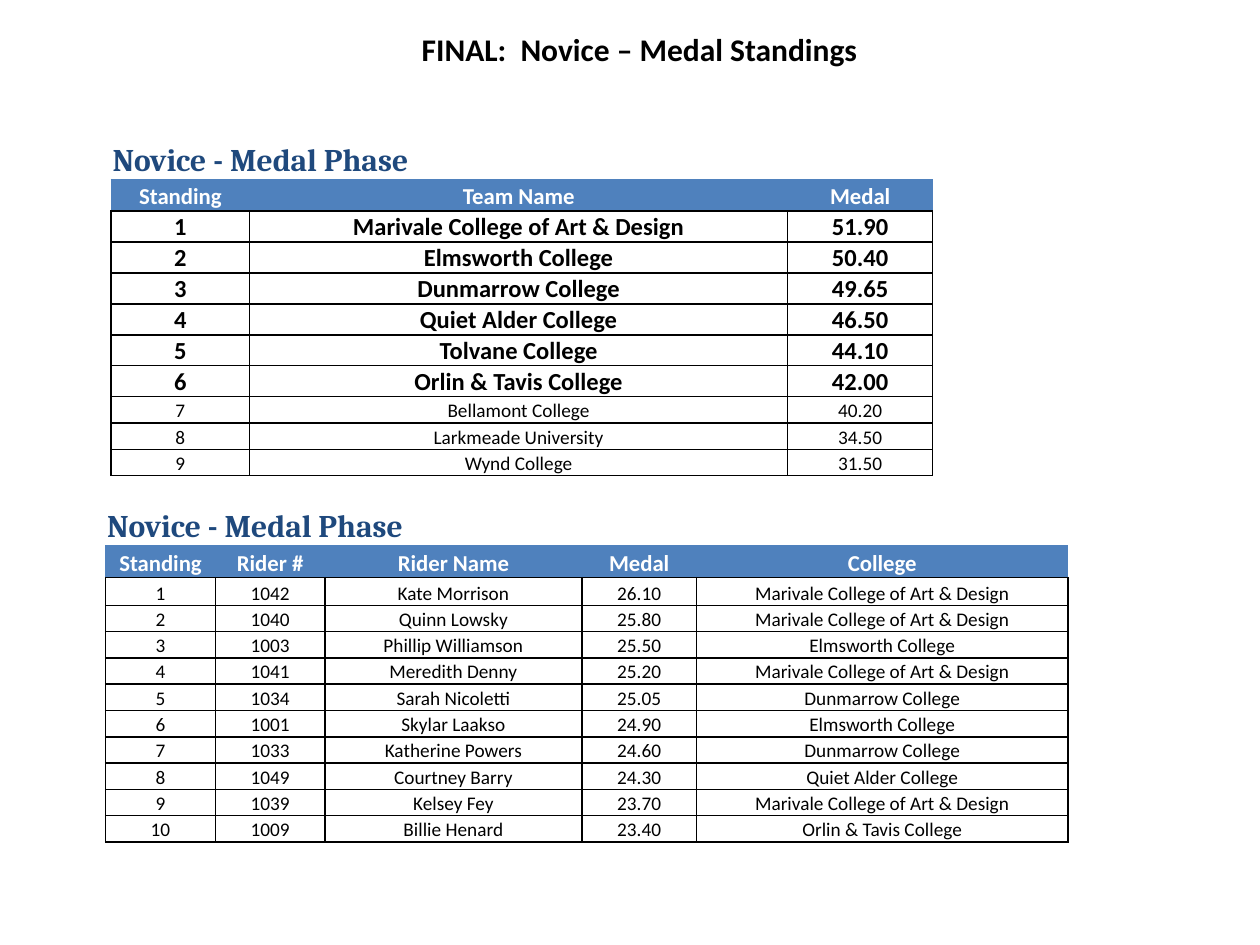
from lxml import etree
from pptx import Presentation
from pptx.dml.color import RGBColor
from pptx.enum.text import MSO_ANCHOR, MSO_AUTO_SIZE, PP_ALIGN
from pptx.oxml.ns import qn
from pptx.util import Cm, Pt

LEFT, CENTER = PP_ALIGN.LEFT, PP_ALIGN.CENTER
BOTTOM = MSO_ANCHOR.BOTTOM
FIT_SHAPE = MSO_AUTO_SIZE.SHAPE_TO_FIT_TEXT

THEME = {
    "body_font": "Calibri", "heading_font": "Cambria",
    "black": "000000", "white": "FFFFFF", "blue": "4F81BD", "navy": "1F497D",
    "title_size": 18, "header_size": 13, "leader_size": 14, "body_size": 11,
    "plain_style": "{2D5ABB26-0587-4C30-8999-92F81FD0307C}",
}

TITLE = "FINAL:  Novice – Medal Standings"
TABLES = [
    {
        "heading": "Novice - Medal Phase",
        "left": 2.24, "top": 2.82, "columns": [2.79, 10.85, 2.92], "leaders": 6,
        "header": ["Standing", "Team Name", "Medal"],
        "rows": [
            ("Marivale College of Art & Design", "51.90"),
            ("Elmsworth College", "50.40"),
            ("Dunmarrow College", "49.65"),
            ("Quiet Alder College", "46.50"),
            ("Tolvane College", "44.10"),
            ("Orlin & Tavis College", "42.00"),
            ("Bellamont College", "40.20"),
            ("Larkmeade University", "34.50"),
            ("Wynd College", "31.50"),
        ],
    },
    {
        "heading": "Novice - Medal Phase",
        "left": 2.13, "top": 10.21, "columns": [2.21, 2.21, 5.18, 2.31, 7.49], "leaders": 0,
        "header": ["Standing", "Rider #", "Rider Name", "Medal", "College"],
        "rows": [
            ("1042", "Kate Morrison", "26.10", "Marivale College of Art & Design"),
            ("1040", "Quinn Lowsky", "25.80", "Marivale College of Art & Design"),
            ("1003", "Phillip Williamson", "25.50", "Elmsworth College"),
            ("1041", "Meredith Denny", "25.20", "Marivale College of Art & Design"),
            ("1034", "Sarah Nicoletti", "25.05", "Dunmarrow College"),
            ("1001", "Skylar Laakso", "24.90", "Elmsworth College"),
            ("1033", "Katherine Powers", "24.60", "Dunmarrow College"),
            ("1049", "Courtney Barry", "24.30", "Quiet Alder College"),
            ("1039", "Kelsey Fey", "23.70", "Marivale College of Art & Design"),
            ("1009", "Billie Henard", "23.40", "Orlin & Tavis College"),
        ],
    },
]
TOP_ROW_HEIGHTS = [0.79, 0.64, 0.56]
ROW_HEIGHT = 0.53
HEADING_SPAN = 3
CELL_MARGIN = 0.03

BLUE_LINE = (THEME["blue"], 0.5)
BLACK_LINE = (THEME["black"], 1)
HEADING_BORDERS = {"B": BLUE_LINE}
HEADER_BORDERS = {"T": BLUE_LINE, "B": BLACK_LINE}
BODY_BORDERS = {side: BLACK_LINE for side in "LRTB"}


def write(frame, text, size, font=THEME["body_font"], color=THEME["black"], bold=True, align=CENTER):
    para = frame.paragraphs[0]
    para.alignment = align
    span = para.add_run()
    span.text = text
    span.font.name = font
    span.font.size = Pt(size)
    span.font.bold = bold
    span.font.color.rgb = RGBColor.from_string(color)


def style_cell(cell, borders, fill=None):
    cell.margin_left = cell.margin_right = cell.margin_top = Cm(CELL_MARGIN)
    cell.margin_bottom = 0
    cell.vertical_anchor = BOTTOM
    properties = cell._tc.get_or_add_tcPr()
    for side in "LRTB":
        line = etree.SubElement(properties, qn(f"a:ln{side}"))
        if side in borders:
            color, width = borders[side]
            line.set("w", str(Pt(width)))
            paint = etree.SubElement(line, qn("a:solidFill"))
            etree.SubElement(paint, qn("a:srgbClr"), val=color)
        else:
            etree.SubElement(line, qn("a:noFill"))
    if fill:
        cell.fill.solid()
        cell.fill.fore_color.rgb = RGBColor.from_string(fill)
    else:
        cell.fill.background()


def add_standings(page, data):
    columns = data["columns"]
    row_count = len(data["rows"]) + 2
    heights = TOP_ROW_HEIGHTS + [ROW_HEIGHT] * (row_count - len(TOP_ROW_HEIGHTS))
    table = page.shapes.add_table(
        row_count, len(columns), Cm(data["left"]), Cm(data["top"]),
        Cm(sum(columns)), Cm(sum(heights))).table
    table.first_row = table.horz_banding = False
    table._tbl.tblPr.find(qn("a:tableStyleId")).text = THEME["plain_style"]
    for column, width in zip(table.columns, columns):
        column.width = Cm(width)
    for row, height in zip(table.rows, heights):
        row.height = Cm(height)

    for index in range(len(columns)):
        style_cell(table.cell(0, index), HEADING_BORDERS if index <= HEADING_SPAN else {})
    heading = table.cell(0, 0)
    heading.merge(table.cell(0, HEADING_SPAN - 1))
    write(heading.text_frame, data["heading"], THEME["title_size"],
          font=THEME["heading_font"], color=THEME["navy"], align=LEFT)

    for index, label in enumerate(data["header"]):
        cell = table.cell(1, index)
        left_edge = {"L": BLUE_LINE} if index == 0 else {}
        style_cell(cell, HEADER_BORDERS | left_edge, fill=THEME["blue"])
        write(cell.text_frame, label, THEME["header_size"], color=THEME["white"])

    for standing, values in enumerate(data["rows"], start=1):
        leader = standing <= data["leaders"]
        size = THEME["leader_size" if leader else "body_size"]
        for index, value in enumerate((str(standing), *values)):
            cell = table.cell(standing + 1, index)
            style_cell(cell, BODY_BORDERS)
            write(cell.text_frame, value, size, bold=leader)


def main():
    deck = Presentation()
    deck.slide_width, deck.slide_height = Cm(25.4), Cm(19.05)
    page = deck.slides.add_slide(deck.slide_layouts[6])
    box = page.shapes.add_textbox(Cm(3.28), Cm(0.48), Cm(19.23), Cm(1.02))
    box.text_frame.word_wrap = True
    box.text_frame.auto_size = FIT_SHAPE
    write(box.text_frame, TITLE, THEME["title_size"])
    for data in TABLES:
        add_standings(page, data)
    deck.save("out.pptx")


if __name__ == "__main__":
    main()
